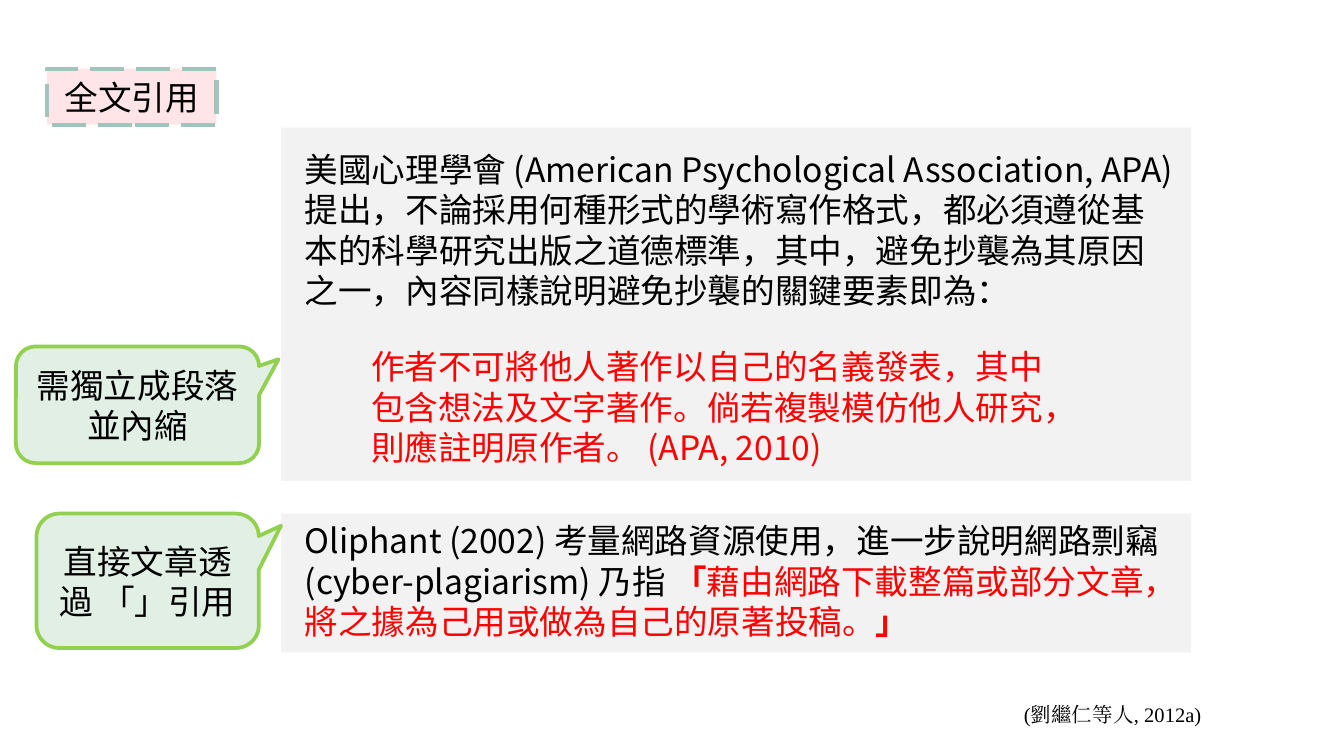
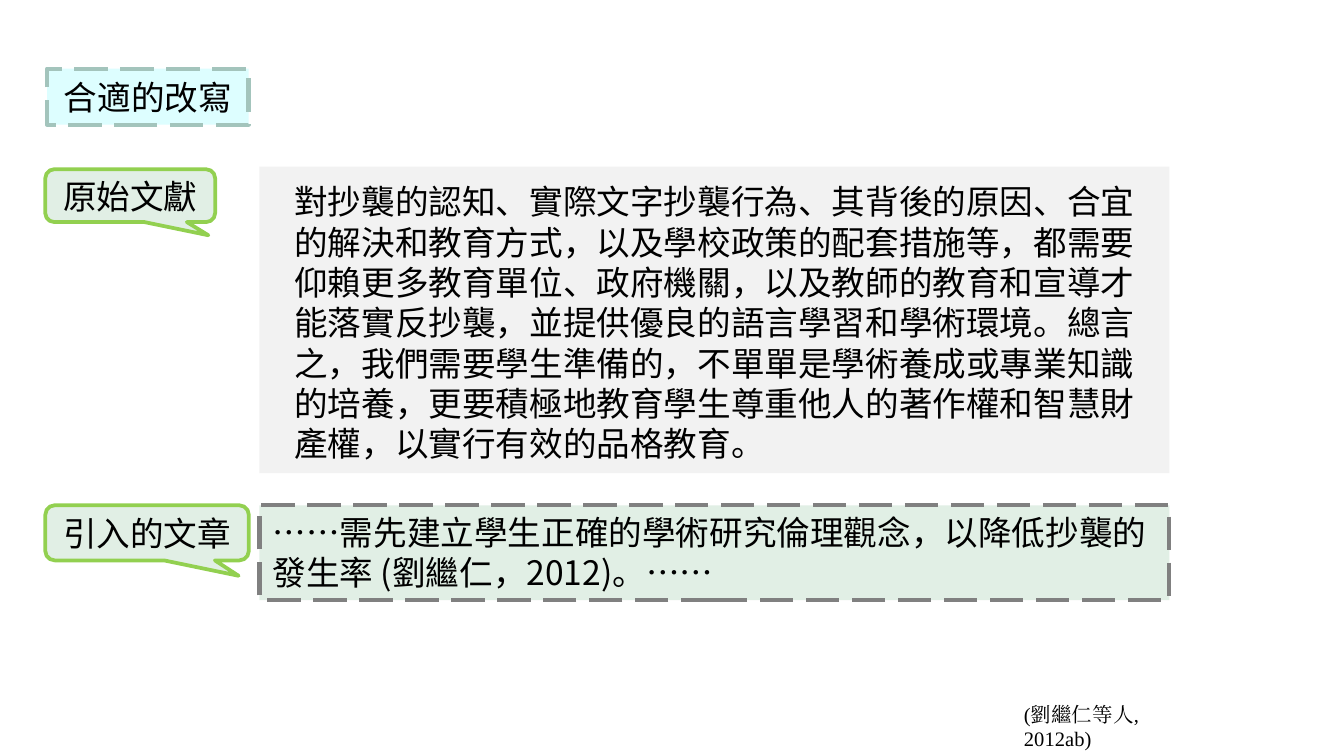
from dataclasses import dataclass

from lxml import etree
from pptx import Presentation
from pptx import util as u
from pptx.dml.color import RGBColor
from pptx.enum import dml, shapes, text
from pptx.oxml import ns

Pt = u.Pt


@dataclass(frozen=True)
class Theme:
    font: str = "Noto Sans CJK SC"
    source_font: str = "Times New Roman"
    body_size: float = 18
    source_size: float = 11
    ink: str = "000000"
    quote: str = "FF0000"
    panel: str = "F2F2F2"
    mint: str = "E1EFE5"
    pink: str = "FFE5E7"
    cyan: str = "DDFEFF"
    title_line: str = "A3C4BC"
    callout_line: str = "92D050"
    cited_line: str = "808080"
    dashed_width: float = 2.25
    callout_width: float = 2


THEME = Theme()


def add_run(paragraph, content, *, color=THEME.ink, size=THEME.body_size, font=THEME.font, bold=False):
    run = paragraph.add_run()
    run.text = content
    run.font.size = Pt(size)
    run.font.name = font
    run.font.bold = bold
    run.font.color.rgb = RGBColor.from_string(color)
    east_asian = etree.SubElement(run.font._element, ns.qn("a:ea"))
    east_asian.set("typeface", font)


class Deck:
    def __init__(self, theme):
        self.theme = theme
        self.presentation = Presentation()
        self.presentation.slide_width = Pt(720)
        self.presentation.slide_height = Pt(405)
        self.slide = None

    def fill_text(self, shape, runs, *, align=text.PP_ALIGN.LEFT, anchor=text.MSO_ANCHOR.TOP, grow=False, **style):
        frame = shape.text_frame
        frame.word_wrap = True
        frame.auto_size = text.MSO_AUTO_SIZE.SHAPE_TO_FIT_TEXT if grow else text.MSO_AUTO_SIZE.NONE
        frame.vertical_anchor = anchor
        paragraph = frame.paragraphs[0]
        paragraph.alignment = align
        for content, changes in runs:
            add_run(paragraph, content, **{**style, **changes})

    def centre_text(self, shape, content):
        self.fill_text(shape, [(content, {})], align=text.PP_ALIGN.CENTER, anchor=text.MSO_ANCHOR.MIDDLE)

    def paint(self, shape, fill, line=None, width=0, dashed=False):
        shape.fill.solid()
        shape.fill.fore_color.rgb = RGBColor.from_string(fill)
        if line is None:
            shape.line.fill.background()
            return
        shape.line.color.rgb = RGBColor.from_string(line)
        shape.line.width = Pt(width)
        if dashed:
            shape.line.dash_style = dml.MSO_LINE.LONG_DASH

    def add_shape(self, kind, box):
        shape = self.slide.shapes.add_shape(kind, *map(Pt, box))
        shape.shadow.inherit = False
        return shape

    def start_slide(self, title, width, fill):
        self.slide = self.presentation.slides.add_slide(self.presentation.slide_layouts[5])
        heading = self.slide.shapes.title
        heading.left, heading.top, heading.width, heading.height = map(Pt, (25.2, 36.8, width, 30))
        self.paint(heading, fill, self.theme.title_line, self.theme.dashed_width, dashed=True)
        self.centre_text(heading, title)

    def panel(self, *box):
        self.paint(self.add_shape(shapes.MSO_SHAPE.RECTANGLE, box), self.theme.panel)

    def passage(self, runs, *box, **style):
        textbox = self.slide.shapes.add_textbox(*map(Pt, box))
        self.fill_text(textbox, runs, grow=True, **style)

    def callout(self, content, box, tip):
        shape = self.add_shape(shapes.MSO_SHAPE.ROUNDED_RECTANGULAR_CALLOUT, box)
        for index, value in enumerate((*tip, 0.17)):
            shape.adjustments[index] = value
        self.paint(shape, self.theme.mint, self.theme.callout_line, self.theme.callout_width)
        self.centre_text(shape, content)

    def cited_passage(self, content, *box):
        shape = self.add_shape(shapes.MSO_SHAPE.RECTANGLE, box)
        self.paint(shape, self.theme.mint, self.theme.cited_line, self.theme.dashed_width, dashed=True)
        self.fill_text(shape, [(content, {})], grow=True)

    def source(self, content):
        self.passage([(content, {})], 541.5, 372.4, 113, 20.6,
                     font=self.theme.source_font, size=self.theme.source_size)


def build_full_quotation(deck):
    quote = {"color": deck.theme.quote}
    mark = {**quote, "bold": True}
    deck.start_slide("全文引用", 90.8, deck.theme.pink)
    deck.panel(150.6, 275.2, 487.5, 74.3)
    deck.passage([
        ("Oliphant (2002) 考量網路資源使用，進一步說明網路剽竊 (cyber-plagiarism) 乃指 ", {}),
        ("「", mark),
        ("藉由網路下載整篇或部分文章，將之據為己用或做為自己的原著投稿。", quote),
        ("」", mark),
    ], 156.2, 275.2, 481.7, 72.7)
    deck.panel(150.6, 68.4, 487.5, 189.2)
    deck.passage([(
        "美國心理學會 (American Psychological Association, APA) 提出，"
        "不論採用何種形式的學術寫作格式，都必須遵從基本的科學研究出版之道德標準，"
        "其中，避免抄襲為其原因之一，內容同樣說明避免抄襲的關鍵要素即為：", {},
    )], 156.2, 76.3, 481.7, 94)
    deck.passage([(
        "作者不可將他人著作以自己的名義發表，其中包含想法及文字著作。"
        "倘若複製模仿他人研究，則應註明原作者。 (APA, 2010)", quote,
    )], 191.8, 182, 378.7, 72.7)
    deck.callout("需獨立成段落並內縮", (8.5, 185.6, 130.3, 62.5), (0.58, -0.39))
    deck.callout("直接文章透過 「」引用", (19.6, 275.2, 119.1, 72), (0.6, -0.41))
    deck.source("(劉繼仁等人, 2012a)")


def build_paraphrase(deck):
    deck.start_slide("合適的改寫", 108, deck.theme.cyan)
    deck.panel(139, 89.3, 487.5, 164.2)
    deck.passage([(
        "對抄襲的認知、實際文字抄襲行為、其背後的原因、合宜的解決和教育方式，"
        "以及學校政策的配套措施等，都需要仰賴更多教育單位、政府機關，"
        "以及教師的教育和宣導才能落實反抄襲，並提供優良的語言學習和學術環境。"
        "總言之，我們需要學生準備的，不單單是學術養成或專業知識的培養，"
        "更要積極地教育學生尊重他人的著作權和智慧財產權，以實行有效的品格教育。", {},
    )], 150.6, 93.6, 481.7, 159.9)
    deck.cited_passage(
        "……需先建立學生正確的學術研究倫理觀念，以降低抄襲的發生率 (劉繼仁，2012)。……",
        139, 270.7, 487.5, 50.9)
    deck.callout("原始文獻", (24.3, 90.7, 91, 28.3), (0.46, 0.75))
    deck.callout("引入的文章", (24.3, 270.7, 109, 29.5), (0.45, 0.78))
    deck.source("(劉繼仁等人, 2012ab)")


def main():
    deck = Deck(THEME)
    build_full_quotation(deck)
    build_paraphrase(deck)
    deck.presentation.save("out.pptx")


if __name__ == "__main__":
    main()
